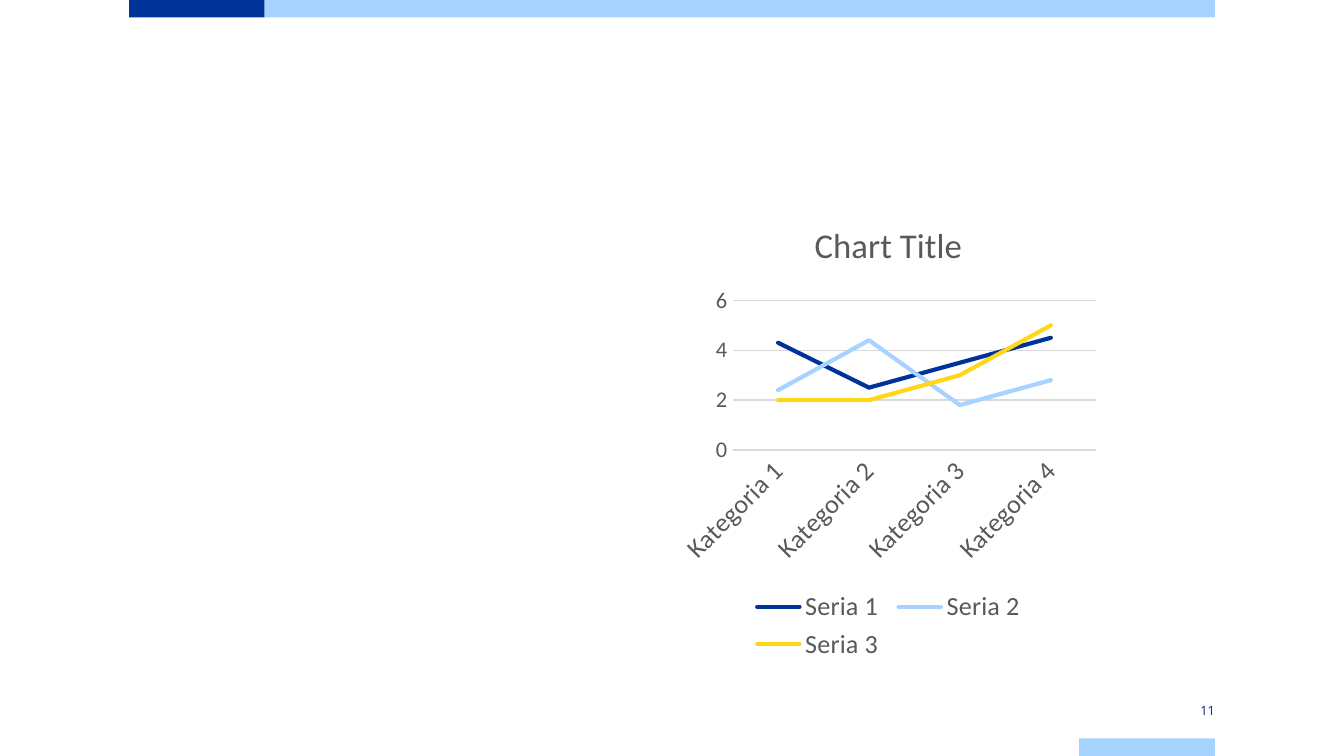
from lxml.etree import SubElement
from pptx import Presentation
from pptx.chart.data import CategoryChartData
from pptx.dml.color import RGBColor
from pptx.enum.chart import XL_CHART_TYPE, XL_LEGEND_POSITION, XL_MARKER_STYLE, XL_TICK_MARK
from pptx.enum.shapes import MSO_SHAPE
from pptx.enum.text import MSO_ANCHOR, PP_ALIGN
from pptx.oxml.ns import qn
from pptx.util import Inches, Pt

WIDTH = 10
HEIGHT = WIDTH * 9 / 16
MARGIN, COL, ROW = 0.96, 1.01, 0.13
NAVY, SKY, YELLOW = "003399", "A6D3FF", "FFD618"
GREY, RULE = "595959", "D9D9D9"
CATEGORIES = [f"Kategoria {i}" for i in range(1, 5)]
SERIES = [
    ("Seria 1", (4.3, 2.5, 3.5, 4.5), NAVY),
    ("Seria 2", (2.4, 4.4, 1.8, 2.8), SKY),
    ("Seria 3", (2, 2, 3, 5), YELLOW),
]


def rgb(value):
    return RGBColor.from_string(value)


def grid_box(col, top, cols, height=ROW):
    return [Inches(v) for v in (MARGIN + col * COL, top, cols * COL, height)]


def set_font(font, size, color, name="Calibri"):
    font.size, font.name, font.bold = Pt(size), name, False
    font.color.rgb = rgb(color)


def set_line(line, color, width):
    line.color.rgb = rgb(color)
    line.width = Pt(width)


def set_layout(parent, index, shares, inner=False):
    for old in parent.findall(qn("c:layout")):
        parent.remove(old)
    layout = SubElement(parent, qn("c:layout"))
    parent.insert(index, layout)
    manual = SubElement(layout, qn("c:manualLayout"))
    if inner:
        SubElement(manual, qn("c:layoutTarget")).set("val", "inner")
    for tag in ("xMode", "yMode"):
        SubElement(manual, qn(f"c:{tag}")).set("val", "edge")
    for tag, share in zip("xywh", shares):
        SubElement(manual, qn(f"c:{tag}")).set("val", str(share))


def add_bar(s, box, color):
    sp = s.shapes.add_shape(MSO_SHAPE.RECTANGLE, *box)
    sp.shadow.inherit = False
    sp.fill.solid()
    sp.fill.fore_color.rgb = rgb(color)
    sp.line.fill.background()


def add_page_number(s, box, number):
    tf = s.shapes.add_textbox(*box).text_frame
    tf.word_wrap = True
    tf.vertical_anchor = MSO_ANCHOR.MIDDLE
    tf.margin_left = tf.margin_right = 0
    tf.margin_top = tf.margin_bottom = Inches(0.08)
    p = tf.paragraphs[0]
    p.text = number
    p.alignment = PP_ALIGN.RIGHT
    set_font(p.font, 6.8, "002073", "Open Sans")


def add_line_chart(s, box):
    data = CategoryChartData()
    data.categories = CATEGORIES
    for name, values, _ in SERIES:
        data.add_series(name, values)
    chart = s.shapes.add_chart(XL_CHART_TYPE.LINE, *box, data).chart
    set_font(chart.font, 10, "000000")

    p = chart.chart_title.text_frame.paragraphs[0]
    p.text = "Chart Title"
    set_font(p.font, 18.6, GREY)
    chart.chart_title.include_in_layout = False

    chart.has_legend = True
    chart.legend.position = XL_LEGEND_POSITION.BOTTOM
    chart.legend.include_in_layout = False
    set_font(chart.legend.font, 14, GREY)
    set_layout(chart.legend._element, 1, (0.17, 0.83, 0.66, 0.17))

    for axis, size in ((chart.category_axis, 14), (chart.value_axis, 12)):
        axis.major_tick_mark = axis.minor_tick_mark = XL_TICK_MARK.NONE
        set_font(axis.tick_labels.font, size, GREY)
    set_line(chart.category_axis.format.line, RULE, 0.75)
    chart.category_axis._element.txPr.bodyPr.set("rot", "-2700000")
    chart.value_axis.format.line.fill.background()
    set_line(chart.value_axis.major_gridlines.format.line, RULE, 0.75)

    plot = chart.plots[0]
    plot.vary_by_categories = False
    set_layout(plot._element.getparent(), 0, (0.14, 0.22, 0.84, 0.32), inner=True)
    for series, (_, _, color) in zip(plot.series, SERIES):
        series.smooth = False
        series.marker.style = XL_MARKER_STYLE.NONE
        set_line(series.format.line, color, 2.25)
        series._element.spPr.find(qn("a:ln")).set("cap", "rnd")


def main():
    prs = Presentation()
    prs.slide_width, prs.slide_height = Inches(WIDTH), Inches(HEIGHT)
    s = prs.slides.add_slide(prs.slide_layouts[6])
    add_bar(s, grid_box(0, 0, 1), NAVY)
    add_bar(s, grid_box(1, 0, 7), SKY)
    add_bar(s, grid_box(7, HEIGHT - ROW, 1), SKY)
    add_line_chart(s, grid_box(4, 1.47, 3.19, 3.48))
    add_page_number(s, grid_box(7, 5.22, 1), "11")
    prs.save("out.pptx")


if __name__ == "__main__":
    main()
